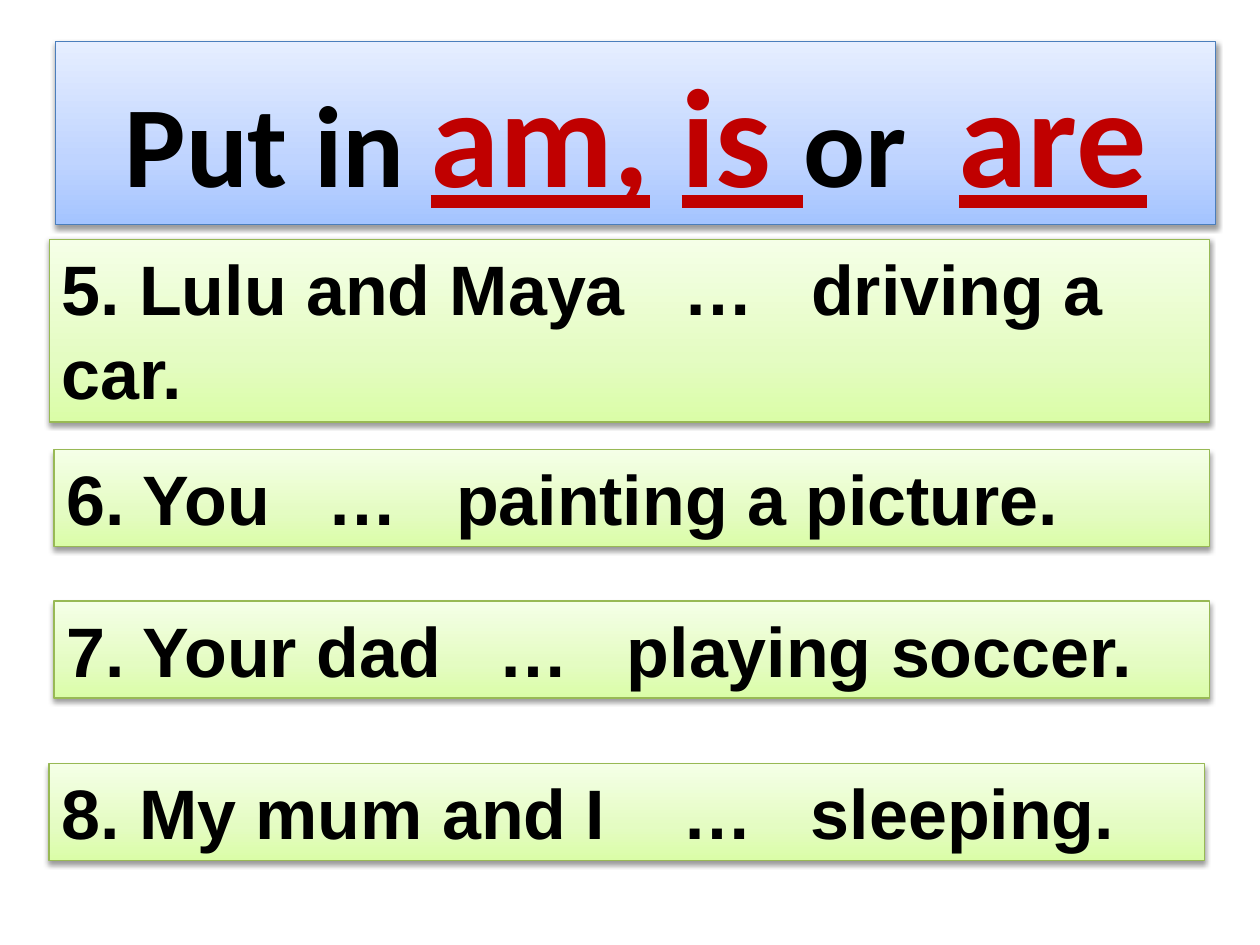
import copy

import lxml.etree
import pptx
import pptx.dml.color
import pptx.enum.shapes
import pptx.enum.text
import pptx.oxml.ns
import pptx.util

Inches = pptx.util.Inches
qn = pptx.oxml.ns.qn
PP_ALIGN = pptx.enum.text.PP_ALIGN

COLORS = {
    "black": "000000",
    "red": "C00000",
    "blue_line": "4B7EBC",
    "blue_dark": "A4C4FF",
    "blue_mid": "BFD4FF",
    "blue_light": "E6EEFF",
    "green_line": "98B955",
    "green_dark": "DAFDA7",
    "green_mid": "E4FCC2",
    "green_light": "F5FFE7",
}


def rgb(name):
    return pptx.dml.color.RGBColor.from_string(COLORS[name])


def add_run(p, text, size=40, font="Arial", color="black", underline=False):
    r = p.add_run()
    r.text = text
    r.font.size = pptx.util.Pt(size)
    r.font.name = font
    r.font.bold = True
    r.font.underline = underline
    r.font.color.rgb = rgb(color)


class SlideBuilder:
    stop_positions = {"dark": 0, "mid": 0.35, "light": 1}

    def __init__(self, s):
        self.s = s

    def gradient(self, sp, hue):
        sp.fill.gradient()
        sp.fill.gradient_angle = 90
        stops = sp._element.spPr.find(".//" + qn("a:gsLst"))
        stops.insert(1, copy.deepcopy(stops[0]))
        for stop, (tone, position) in zip(sp.fill.gradient_stops, self.stop_positions.items()):
            stop.position = position
            stop.color.rgb = rgb(f"{hue}_{tone}")

    def shadow(self, sp):
        sp.shadow.inherit = False
        effects = sp._element.spPr.find(qn("a:effectLst"))
        outer = lxml.etree.SubElement(
            effects, qn("a:outerShdw"),
            blurRad="40000", dist="20000", dir="5400000", rotWithShape="0")
        color = lxml.etree.SubElement(outer, qn("a:srgbClr"), val=COLORS["black"])
        lxml.etree.SubElement(color, qn("a:alpha"), val="38000")

    def panel(self, left, top, width, height, hue, align=PP_ALIGN.LEFT):
        sp = self.s.shapes.add_shape(
            pptx.enum.shapes.MSO_SHAPE.RECTANGLE,
            Inches(left), Inches(top), Inches(width), Inches(height))
        self.gradient(sp, hue)
        sp.line.color.rgb = rgb(f"{hue}_line")
        sp.line.width = pptx.util.Pt(0.75)
        self.shadow(sp)
        tf = sp.text_frame
        tf.word_wrap = True
        tf.auto_size = pptx.enum.text.MSO_AUTO_SIZE.SHAPE_TO_FIT_TEXT
        tf.vertical_anchor = pptx.enum.text.MSO_ANCHOR.TOP
        p = tf.paragraphs[0]
        p.alignment = align
        return p

    def title(self, parts):
        p = self.panel(0.44, 0.33, 9.21, 1.45, "blue", PP_ALIGN.CENTER)
        for text, style in parts:
            add_run(p, text, font="Calibri", **style)

    def sentence(self, text, left, top, width=9.17, height=0.77):
        add_run(self.panel(left, top, width, height, "green"), text)


def main():
    prs = pptx.Presentation()
    prs.slide_width, prs.slide_height = Inches(10), Inches(7.5)
    slide = SlideBuilder(prs.slides.add_slide(prs.slide_layouts[6]))

    plain = {"size": 66}
    gap = {"size": 80, "color": "red"}
    verb = {**gap, "underline": True}
    slide.title([
        ("Put in ", plain),
        ("am,", verb),
        (" ", gap),
        ("is ", verb),
        ("or  ", plain),
        ("are", verb),
    ])

    slide.sentence("5. Lulu and Maya   …   driving a car.", 0.39, 1.9, 9.21, 1.45)
    slide.sentence("6. You   …   painting a picture.", 0.43, 3.57)
    slide.sentence("7. Your dad   …   playing soccer.", 0.43, 4.77)
    slide.sentence("8. My mum and I    …   sleeping.", 0.39, 6.06)

    prs.save("out.pptx")


if __name__ == "__main__":
    main()
